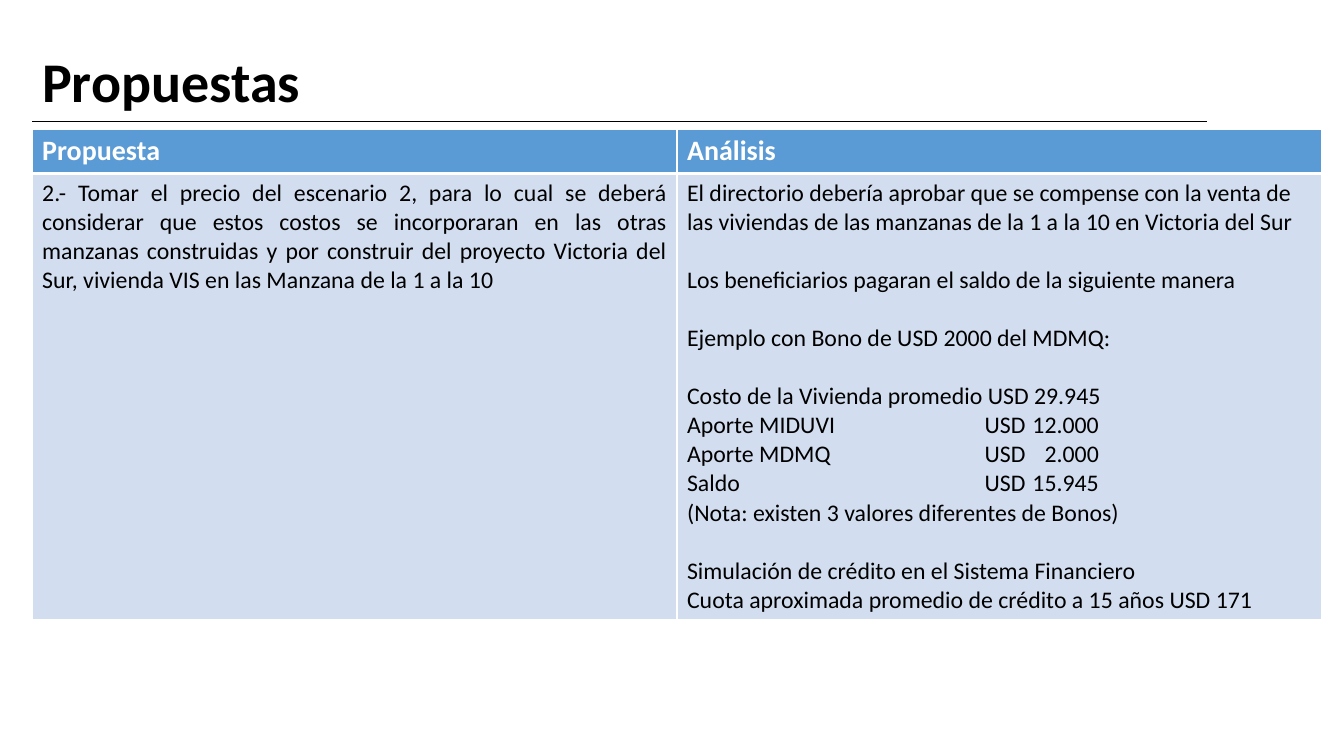
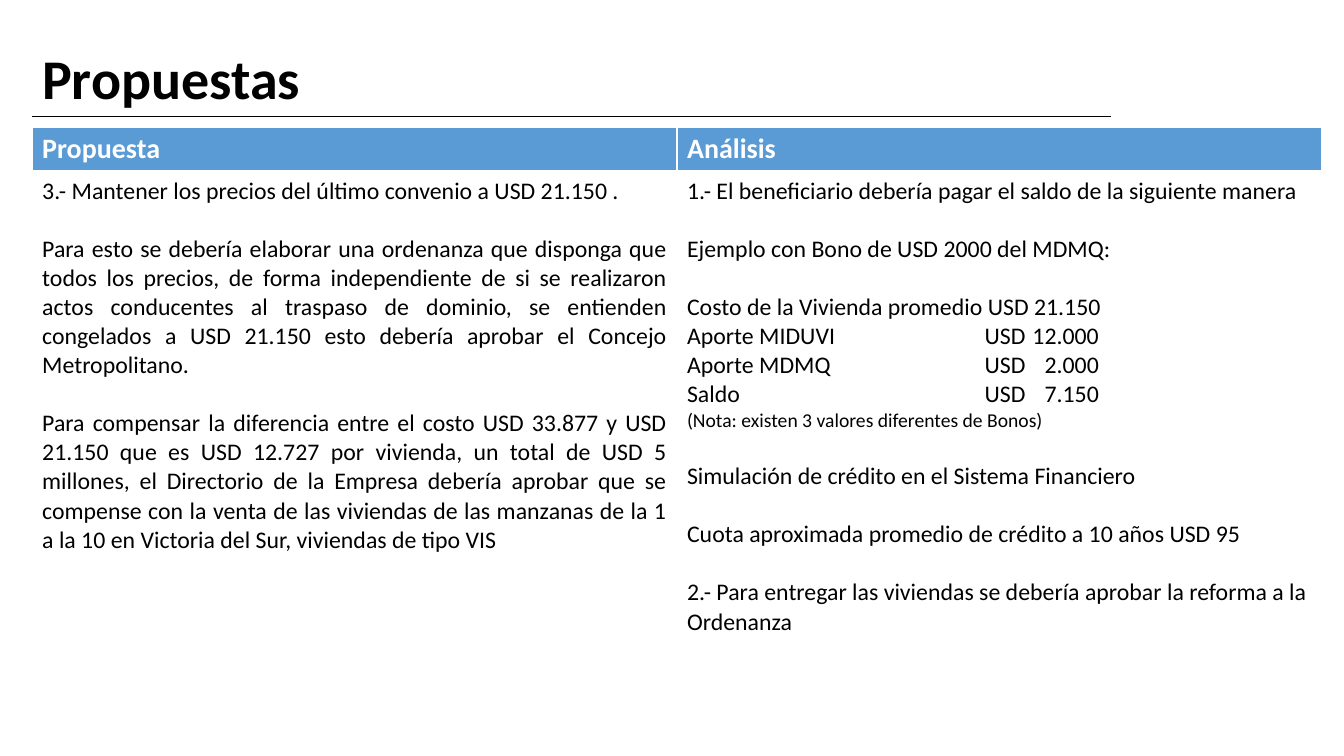
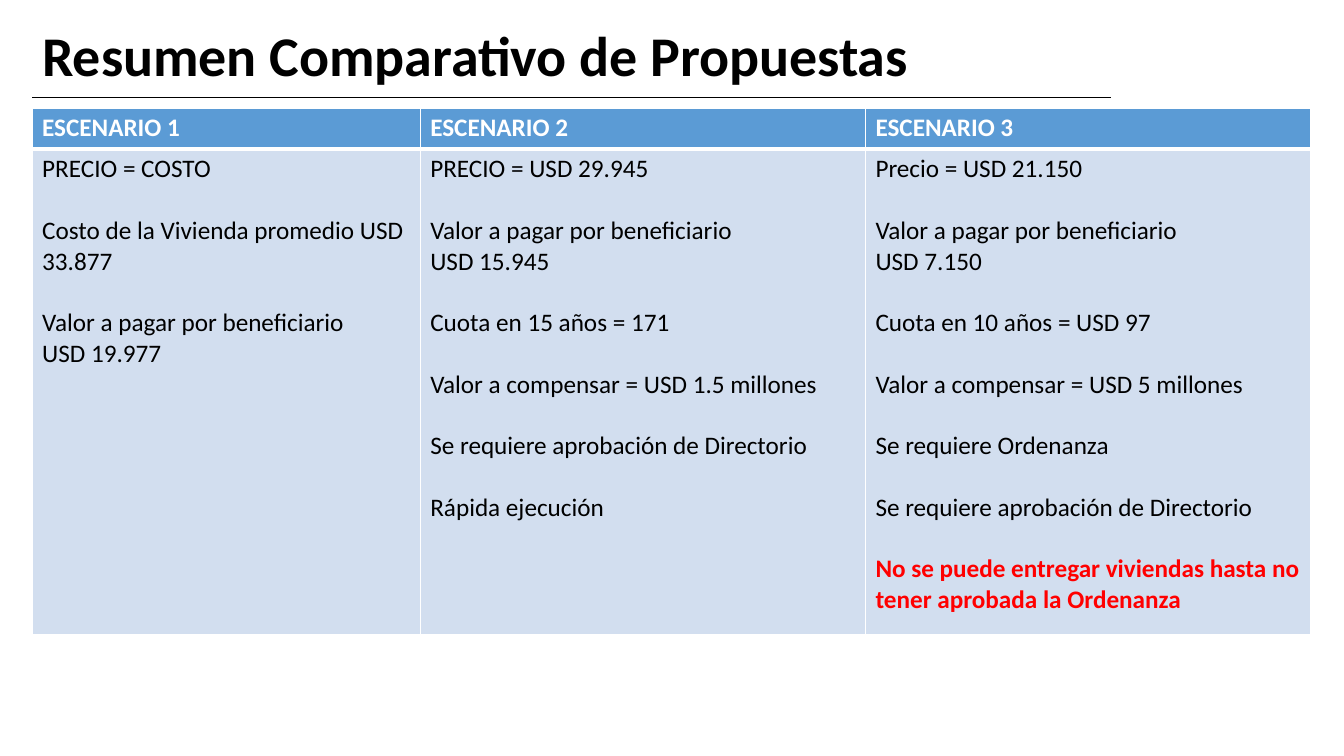
"""Build three slides that compare housing price proposals."""
import dataclasses

import lxml.etree
import pptx
import pptx.dml.color
import pptx.enum.shapes
import pptx.enum.text
import pptx.oxml.ns
import pptx.util

Cm = pptx.util.Cm
Pt = pptx.util.Pt
ALIGN = pptx.enum.text.PP_ALIGN


@dataclasses.dataclass(frozen=True)
class Theme:
    """Colours, type sizes and shared lengths in centimetres."""
    font: str = "Calibri"
    black: str = "000000"
    white: str = "FFFFFF"
    blue: str = "5B9BD5"
    pale: str = "D2DEEF"
    red: str = "FF0000"
    title: int = 40
    head: int = 20
    body: int = 17
    sum: int = 18
    note: int = 14
    pitch: float = 1.22
    left: float = 0.81
    width: float = 29.62
    height: float = 1.96


THEME = Theme()


@dataclasses.dataclass(frozen=True)
class Line:
    """A paragraph whose look departs from its cell."""
    text: str
    size: int = 0
    color: str = THEME.black
    bold: bool = False


def rgb(code):
    """Turn a hex code into a colour."""
    return pptx.dml.color.RGBColor.from_string(code)


def style(para, size, color, bold, align=ALIGN.LEFT):
    """Set the font and alignment of a paragraph."""
    para.alignment = align
    font = para.font
    font.name, font.size, font.bold = THEME.font, Pt(size), bold
    font.color.rgb = rgb(color)


def add_tag(parent, tag, **attrs):
    """Append a drawing element to its parent."""
    node = lxml.etree.SubElement(parent, pptx.oxml.ns.qn(tag))
    for key, value in attrs.items():
        node.set(key, str(value))
    return node


def add_title(slide, text, top):
    """Place the slide title."""
    title = slide.shapes.title
    title.left, title.top = Cm(THEME.left), Cm(top)
    title.width, title.height = Cm(THEME.width), Cm(THEME.height)
    frame = title.text_frame
    frame.text = text
    frame.auto_size = pptx.enum.text.MSO_AUTO_SIZE.NONE
    frame.vertical_anchor = pptx.enum.text.MSO_ANCHOR.TOP
    style(frame.paragraphs[0], THEME.title, THEME.black, True)


def add_rule(slide, top, width):
    """Draw the thin line under the title."""
    rule = slide.shapes.add_connector(
        pptx.enum.shapes.MSO_CONNECTOR.STRAIGHT,
        Cm(THEME.left), Cm(top), Cm(THEME.left + width), Cm(top))
    rule.line.color.rgb = rgb(THEME.black)
    rule.line.width = Pt(0.5)
    add_tag(rule._element.spPr, "a:effectLst")


def paint(cell, fill, top, base):
    """Give a cell white borders and a plain fill."""
    props = cell._tc.get_or_add_tcPr()
    for side, width in zip("LRTB", (1, 1, top, base)):
        edge = add_tag(props, f"a:ln{side}", w=Pt(width))
        solid = add_tag(edge, "a:solidFill")
        add_tag(solid, "a:srgbClr", val=THEME.white)
    cell.fill.solid()
    cell.fill.fore_color.rgb = rgb(fill)


def add_tabs(para):
    """Set tab stops for the currency and the amount."""
    tabs = add_tag(para._p.get_or_add_pPr(), "a:tabLst")
    add_tag(tabs, "a:tab", pos=Cm(7.5), algn="l")
    add_tag(tabs, "a:tab", pos=Cm(10.38), algn="r")


def fill_cell(cell, groups, size, align):
    """Write groups of lines, one line of space between groups."""
    frame = cell.text_frame
    first = True
    for group in groups:
        for index, item in enumerate(group):
            line = item if isinstance(item, Line) else Line(item)
            para = frame.paragraphs[0] if first else frame.add_paragraph()
            para.text = line.text
            if "\t" in line.text:
                add_tabs(para)
            if index == 0 and not first:
                para.space_before = Pt(round(size * THEME.pitch, 2))
            style(para, line.size or size, line.color, line.bold, align)
            first = False


def add_grid(slide, top, widths, heights, heads, cells, sizes, aligns, fill):
    """Add a table with a header row and one body row."""
    shape = slide.shapes.add_table(
        2, len(widths), Cm(THEME.left), Cm(top), Cm(sum(widths)), Cm(sum(heights)))
    table = shape.table
    for row, height in zip(table.rows, heights):
        row.height = Cm(height)
    for col, width in enumerate(widths):
        table.columns[col].width = Cm(width)
        head, body = table.cell(0, col), table.cell(1, col)
        paint(head, THEME.blue, 1, 3)
        paint(body, fill, 3, 1)
        title = Line(heads[col], color=THEME.white, bold=True)
        fill_cell(head, [[title]], sizes[0], aligns[0])
        fill_cell(body, cells[col], sizes[1], aligns[1][col])


def add_plan(slide, top, height, cells, fill):
    """Add the table that sets a proposal beside its analysis."""
    add_grid(slide, top, [16.25] * 2, [1.12, height], ["Propuesta", "Análisis"],
             cells, (THEME.head, THEME.body),
             (ALIGN.JUSTIFY, (ALIGN.JUSTIFY, ALIGN.LEFT)), fill)


def costs(price, rest, size):
    """List the price, the grants and the balance of a home."""
    return [f"Costo de la Vivienda promedio USD {price}",
            "Aporte MIDUVI\tUSD\t12.000",
            "Aporte MDMQ\tUSD\t2.000",
            f"Saldo\tUSD\t{rest}",
            Line("(Nota: existen 3 valores diferentes de Bonos)", size)]


def due(amount):
    """List what the buyer pays."""
    return ["Valor a pagar por beneficiario", f"USD {amount}"]


def main():
    """Build and save the slides."""
    deck = pptx.Presentation()
    deck.slide_width, deck.slide_height = Cm(33.87), Cm(19.05)
    bonus = ["Ejemplo con Bono de USD 2000 del MDMQ:"]
    loan = "Simulación de crédito en el Sistema Financiero"
    board = ["Se requiere aprobación de Directorio"]

    def add_slide(title, top, rule, width):
        """Start a slide with its title and rule."""
        slide = deck.slides.add_slide(deck.slide_layouts[5])
        add_title(slide, title, top)
        add_rule(slide, rule, width)
        return slide

    slide = add_slide("Propuestas", 1.04, 3.05, THEME.width)
    add_plan(slide, 3.25, 11.02, [
        [["2.- Tomar el precio del escenario 2, para lo cual se deberá considerar "
          "que estos costos se incorporaran en las otras manzanas construidas y "
          "por construir del proyecto Victoria del Sur, vivienda VIS en las "
          "Manzana de la 1 a la 10"]],
        [["El directorio debería aprobar que se compense con la venta de las "
          "viviendas de las manzanas de la 1 a la 10 en Victoria del Sur"],
         ["Los beneficiarios pagaran el saldo de la siguiente manera"],
         bonus,
         costs("29.945", "15.945", THEME.body),
         [loan, "Cuota aproximada promedio de crédito a 15 años USD 171"]],
    ], THEME.pale)

    slide = add_slide("Propuestas", 0.97, 2.92, 27.18)
    add_plan(slide, 3.2, 11.63, [
        [["3.- Mantener los precios del último convenio a USD 21.150 ."],
         ["Para esto se debería elaborar una ordenanza que disponga que todos los "
          "precios, de forma independiente de si se realizaron actos conducentes "
          "al traspaso de dominio, se entienden congelados a USD 21.150 esto "
          "debería aprobar el Concejo Metropolitano."],
         ["Para compensar la diferencia entre el costo USD 33.877 y USD 21.150 "
          "que es USD 12.727 por vivienda, un total de USD 5 millones, el "
          "Directorio de la Empresa debería aprobar que se compense con la venta "
          "de las viviendas de las manzanas de la 1 a la 10 en Victoria del Sur, "
          "viviendas de tipo VIS"]],
        [["1.- El beneficiario debería pagar el saldo de la siguiente manera"],
         bonus,
         costs("21.150", "7.150", THEME.note),
         [loan],
         ["Cuota aproximada promedio de crédito a 10 años USD 95"],
         ["2.- Para entregar las viviendas se debería aprobar la reforma a la "
          "Ordenanza"]],
    ], THEME.white)

    slide = add_slide("Resumen Comparativo de Propuestas", 0.38, 2.46, 27.18)
    add_grid(slide, 2.72, [9.78, 11.22, 11.22], [1.02, 12.24],
             [f"ESCENARIO {number}" for number in (1, 2, 3)], [
        [["PRECIO = COSTO"],
         ["Costo de la Vivienda promedio USD 33.877"],
         due("19.977")],
        [["PRECIO = USD 29.945"],
         due("15.945"),
         ["Cuota en 15 años = 171"],
         ["Valor a compensar = USD 1.5 millones"],
         board,
         ["Rápida ejecución"]],
        [["Precio = USD 21.150"],
         due("7.150"),
         ["Cuota en 10 años = USD 97"],
         ["Valor a compensar = USD 5 millones"],
         ["Se requiere Ordenanza"],
         board,
         [Line("No se puede entregar viviendas hasta no tener aprobada la "
               "Ordenanza", color=THEME.red, bold=True)]],
    ], (THEME.sum, THEME.sum), (ALIGN.LEFT, [ALIGN.LEFT] * 3), THEME.pale)

    deck.save("out.pptx")


if __name__ == "__main__":
    main()
